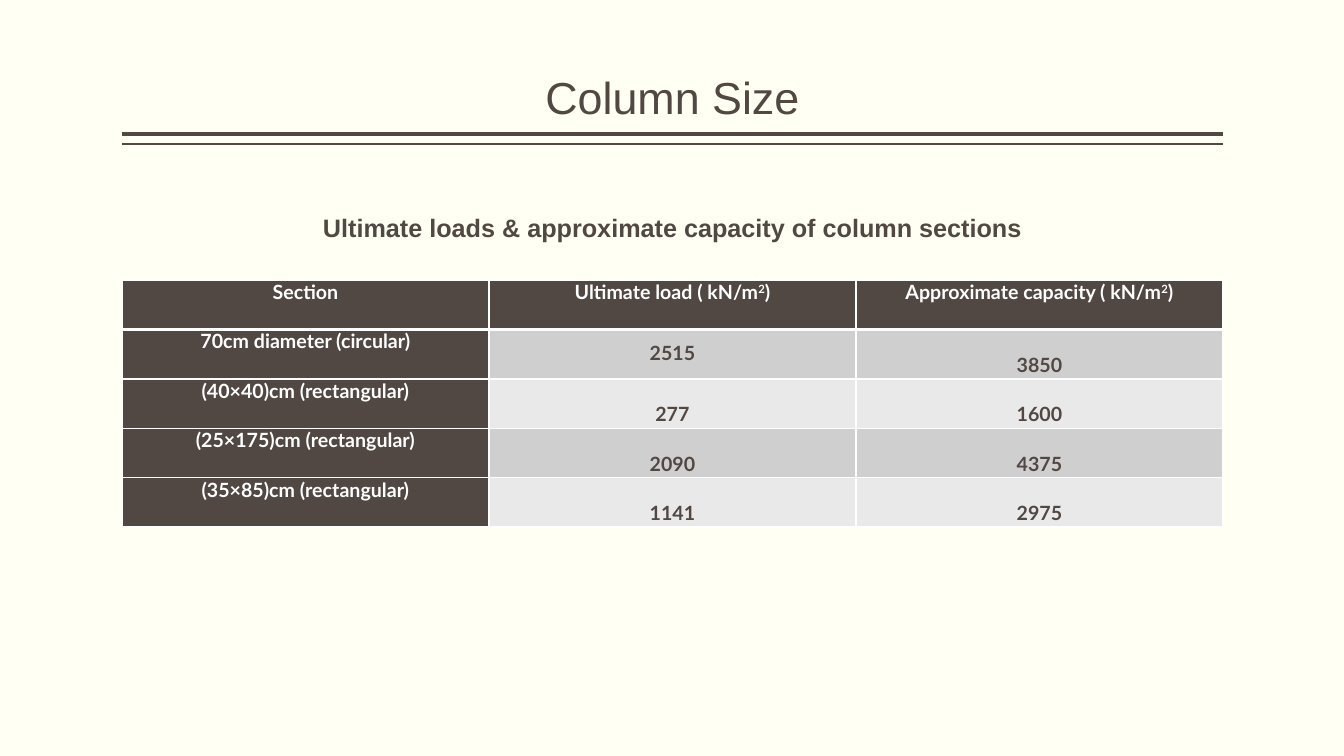
from lxml.etree import SubElement
from pptx import Presentation
from pptx.dml.color import RGBColor
from pptx.enum.shapes import MSO_CONNECTOR as Connector
from pptx.enum.text import MSO_ANCHOR as Anchor, PP_ALIGN as Align
from pptx.oxml.ns import qn
from pptx.util import Inches, Pt

COLORS = {"page": "FFFFF3", "brown": "514843", "white": "FFFFFF",
          "dark_band": "D0CFCF", "light_band": "E9E9E9"}
LEFT, WIDTH = 1.21, 10.92
ROW_HEIGHT = 0.49

# Each run of a header is its text and whether it is raised
UNIT_END = [("2", True), (")", False)]
HEADERS = [[("Section", False)],
           [("Ultimate load ( kN/m", False)] + UNIT_END,
           [("Approximate capacity ( kN/m", False)] + UNIT_END]
SECTIONS = [("70cm diameter (circular)", "2515", "3850"),
            ("(40×40)cm (rectangular)", "277", "1600"),
            ("(25×175)cm (rectangular)", "2090", "4375"),
            ("(35×85)cm (rectangular)", "1141", "2975")]


def color(name):
    return RGBColor.from_string(COLORS[name])


class SlideBuilder:
    def __init__(self, page):
        self.page = page
        page.background.fill.solid()
        page.background.fill.fore_color.rgb = color("page")

    def span(self, para, text, size, font, ink, bold=False, raised=False):
        span = para.add_run()
        span.text = text
        span.font.size = Pt(size)
        span.font.name = font
        span.font.bold = bold
        span.font.color.rgb = color(ink)
        if raised:
            span._r.get_or_add_rPr().set("baseline", "30000")

    def text(self, left, top, width, height, text, size, anchor,
             bold=False, side_inset=0.0, spacing=1.0, wrap=True):
        box = self.page.shapes.add_textbox(
            Inches(left), Inches(top), Inches(width), Inches(height))
        frame = box.text_frame
        frame.word_wrap = wrap
        frame.vertical_anchor = anchor
        frame.margin_left = frame.margin_right = Inches(side_inset)
        para = frame.paragraphs[0]
        para.alignment = Align.CENTER
        para.line_spacing = spacing
        self.span(para, text, size, "Arial", "brown", bold)

    def rule(self, top, weight):
        line = self.page.shapes.add_connector(
            Connector.STRAIGHT, Inches(LEFT + WIDTH), Inches(top),
            Inches(LEFT), Inches(top))
        line.line.color.rgb = color("brown")
        line.line.width = Pt(weight)
        SubElement(line._element.spPr, qn("a:effectLst"))

    def cell(self, cell, runs, fill, ink, spacing, top_weight, bottom_weight):
        # Borders come before the fill in the cell properties
        properties = cell._tc.get_or_add_tcPr()
        weights = {"L": 1, "R": 1, "T": top_weight, "B": bottom_weight}
        for side, weight in weights.items():
            border = SubElement(properties, qn(f"a:ln{side}"), w=str(Pt(weight)))
            solid = SubElement(border, qn("a:solidFill"))
            SubElement(solid, qn("a:srgbClr"), val=COLORS["white"])
        cell.fill.solid()
        cell.fill.fore_color.rgb = color(fill)
        cell.margin_left = cell.margin_right = Inches(0.07)
        cell.margin_top = cell.margin_bottom = 0
        para = cell.text_frame.paragraphs[0]
        para.alignment = Align.CENTER
        para.line_spacing = spacing
        para.space_after = Pt(6)
        for text, raised in runs:
            self.span(para, text, 14, "Lato", ink, True, raised)

    def table(self, top, headers, sections):
        rows, columns = len(sections) + 1, len(headers)
        frame = self.page.shapes.add_table(
            rows, columns, Inches(LEFT), Inches(top),
            Inches(WIDTH), Inches(ROW_HEIGHT * rows))
        table = frame.table
        for column, runs in enumerate(headers):
            self.cell(table.cell(0, column), runs, "brown", "white", 1.0, 1, 3)
        for row, values in enumerate(sections, start=1):
            band = "dark_band" if row % 2 else "light_band"
            for column, value in enumerate(values):
                fill, ink, spacing = band, "brown", 2.0
                if column == 0:
                    fill, ink, spacing = "brown", "white", 1.0
                elif (row, column) == (1, 1):
                    spacing = 1.5
                self.cell(table.cell(row, column), [(value, False)], fill, ink,
                          spacing, 3 if row == 1 else 1, 1)


def main():
    deck = Presentation()
    deck.slide_width, deck.slide_height = Inches(13.33), Inches(7.5)
    slide = SlideBuilder(deck.slides.add_slide(deck.slide_layouts[6]))

    # Title with its double rule
    slide.rule(1.33, 3)
    slide.rule(1.43, 1)
    slide.text(LEFT, 0.08, WIDTH, 1.2, "Column Size", 32, Anchor.BOTTOM,
               spacing=0.9)

    # Load table and its heading
    slide.table(2.78, HEADERS, SECTIONS)
    slide.text(3.07, 2.06, 7.2, 0.4,
               "Ultimate loads & approximate capacity of column sections",
               18, Anchor.MIDDLE, bold=True, side_inset=0.1, wrap=False)

    deck.save("out.pptx")


if __name__ == "__main__":
    main()
